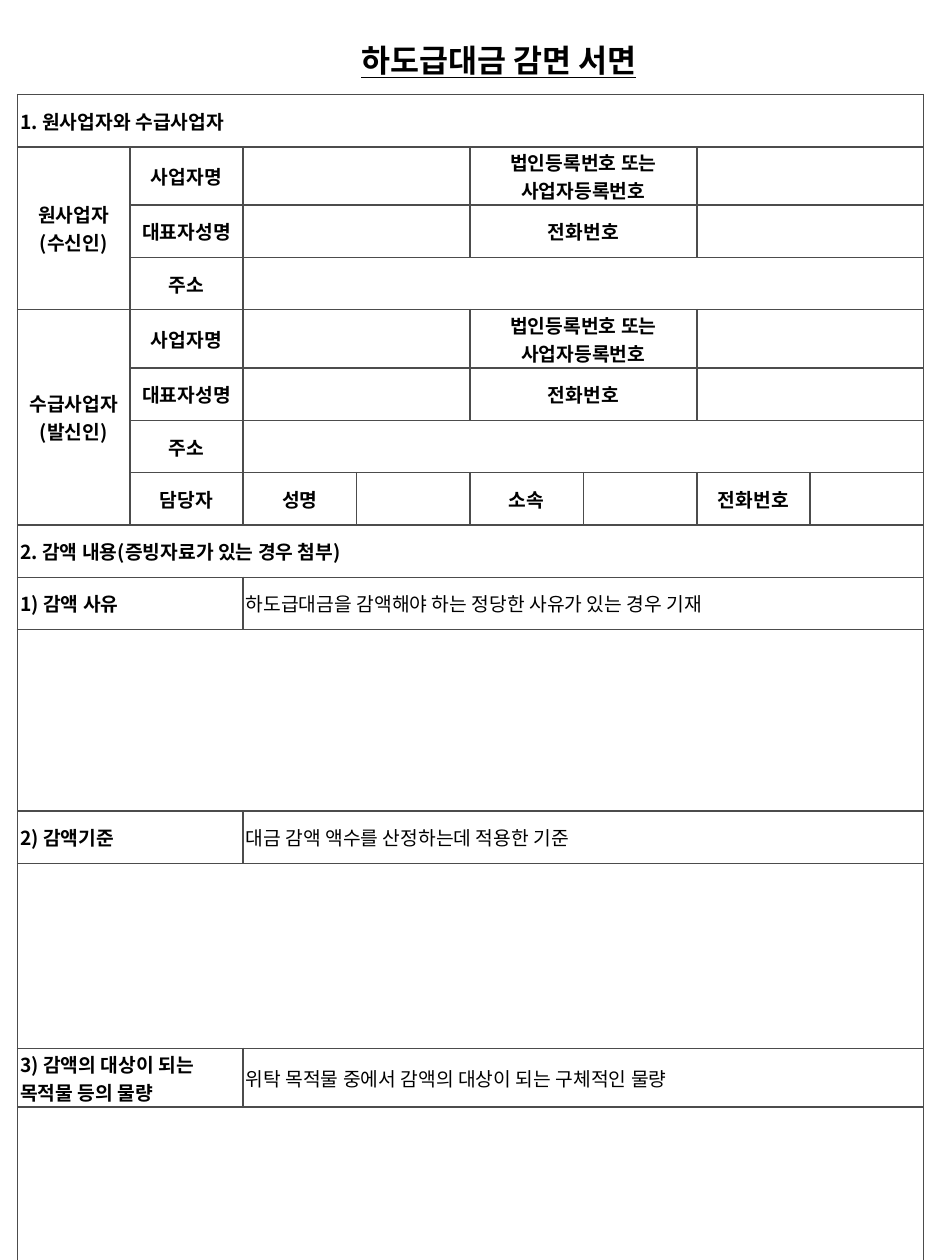
from lxml import etree
from pptx import Presentation
from pptx.dml.color import RGBColor
from pptx.enum import text
from pptx.oxml.ns import qn
from pptx.util import Inches, Pt

FONT = "Noto Sans CJK KR"
COLORS = {"ink": "000000", "paper": "FFFFFF", "rule": "4C4C4C"}
TITLE = "하도급대금 감면 서면"

COLUMNS = [0.89] + [0.9] * 7
ROW, REASON, BASIS, QUANTITY = 0.415, 1.44, 1.47, 1.42

# Cell: (text, columns spanned, rows spanned, style); a line break starts a paragraph.
LABEL, HEADING, HINT = "label", "heading", "hint"


def label(words, columns=1, rows=1):
    return words, columns, rows, LABEL


def blank(columns=1):
    return label("", columns)


def item(heading, hint):
    return [(heading, 2, 1, HEADING), (hint, 6, 1, HINT)]


COMPANY = [
    [label("사업자명"), blank(2), label("법인등록번호 또는\n사업자등록번호", 2), blank(2)],
    [label("대표자성명"), blank(2), label("전화번호", 2), blank(2)],
    [label("주소"), blank(6)],
]
CONTACT = [label("담당자"), label("성명"), blank(), label("소속"), blank(),
           label("전화번호"), blank()]


def party(words, rows):
    """Put one tall label in front of a group of rows."""
    return [[label(words, 1, len(rows))] + rows[0]] + rows[1:]


# Each form row: (height, cells)
FORM = [(ROW, cells) for cells in [
    [("1. 원사업자와 수급사업자", 8, 1, HEADING)],
    *party("원사업자\n(수신인)", COMPANY),
    *party("수급사업자\n(발신인)", COMPANY + [CONTACT]),
    [("2. 감액 내용(증빙자료가 있는 경우 첨부)", 8, 1, HEADING)],
]]
for height, heading, hint in [
    (REASON, "1) 감액 사유", "하도급대금을 감액해야 하는 정당한 사유가 있는 경우 기재"),
    (BASIS, "2) 감액기준", "대금 감액 액수를 산정하는데 적용한 기준"),
    (QUANTITY, "3) 감액의 대상이 되는 목적물 등의 물량",
     "위탁 목적물 중에서 감액의 대상이 되는 구체적인 물량"),
]:
    FORM += [(ROW, item(heading, hint)), (height, [blank(8)])]


def color(name):
    return RGBColor.from_string(COLORS[name])


def add_span(para, words, size, bold=True, underline=None):
    span = para.add_run()
    span.text = words
    font = span.font
    font.size, font.bold, font.underline = Pt(size), bold, underline
    font.color.rgb = color("ink")
    font.name = FONT
    east_asian = etree.SubElement(font._element, qn("a:ea"))
    east_asian.set("typeface", FONT)


def format_cell(cell):
    properties = cell._tc.get_or_add_tcPr()
    for side in ("lnL", "lnR", "lnT", "lnB"):
        line = etree.SubElement(properties, qn(f"a:{side}"), w=str(Pt(1)))
        fill = etree.SubElement(line, qn("a:solidFill"))
        etree.SubElement(fill, qn("a:srgbClr"), val=COLORS["rule"])
    cell.fill.solid()
    cell.fill.fore_color.rgb = color("paper")
    cell.margin_left = cell.margin_right = Inches(0.02)
    cell.margin_top = cell.margin_bottom = Inches(0.01)
    cell.vertical_anchor = text.MSO_ANCHOR.MIDDLE


def write_cell(cell, words, style):
    frame = cell.text_frame
    for index, line in enumerate(words.split("\n")):
        para = frame.add_paragraph() if index else frame.paragraphs[0]
        if style == LABEL:
            para.alignment = text.PP_ALIGN.CENTER
        add_span(para, line, 11, bold=style != HINT)


def add_form(page):
    heights = [height for height, _ in FORM]
    table = page.shapes.add_table(
        len(FORM), len(COLUMNS), Inches(0.14), Inches(0.75),
        Inches(sum(COLUMNS)), Inches(sum(heights))).table
    table.first_row = table.horz_banding = False
    for column, width in zip(table.columns, COLUMNS):
        column.width = Inches(width)
    for row, height in zip(table.rows, heights):
        row.height = Inches(height)
    for cell in table.iter_cells():
        format_cell(cell)

    for row, (_, cells) in enumerate(FORM):
        column = 0
        for words, columns, rows, style in cells:
            while table.cell(row, column).is_spanned:
                column += 1
            cell = table.cell(row, column)
            if columns * rows > 1:
                cell.merge(table.cell(row + rows - 1, column + columns - 1))
            if words:
                write_cell(cell, words, style)
            column += columns


def add_title(page):
    box = page.shapes.add_textbox(Inches(2.77), Inches(0.28), Inches(2.63), Inches(0.4))
    frame = box.text_frame
    frame.word_wrap = False
    frame.auto_size = text.MSO_AUTO_SIZE.SHAPE_TO_FIT_TEXT
    add_span(frame.paragraphs[0], TITLE, 18, underline=True)


def main():
    deck = Presentation()
    deck.slide_width, deck.slide_height = Inches(7.5), Inches(10)
    page = deck.slides.add_slide(deck.slide_layouts[6])
    add_form(page)
    add_title(page)
    deck.save("out.pptx")


if __name__ == "__main__":
    main()
